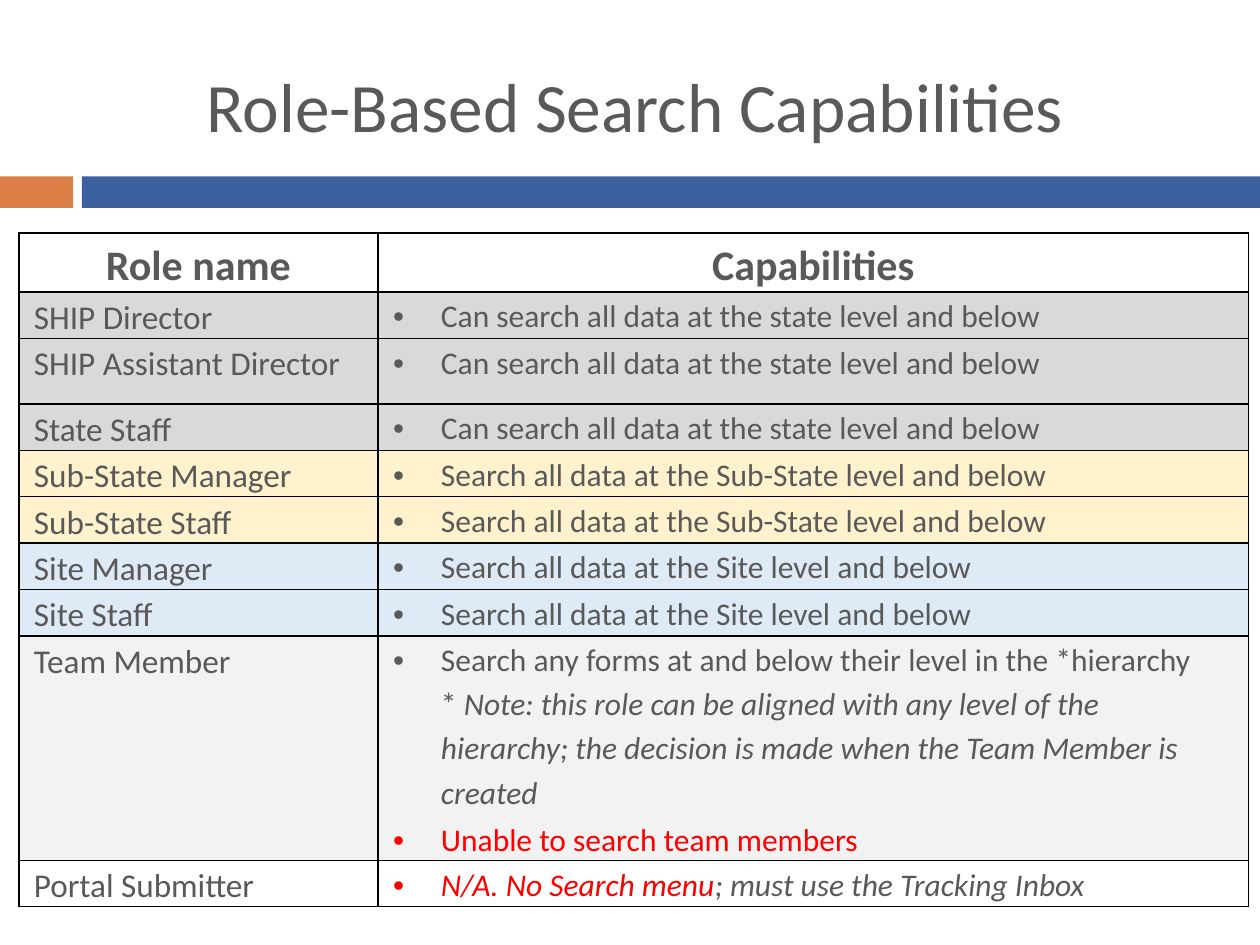
from dataclasses import dataclass

from lxml import etree
from pptx import Presentation
from pptx import util as u
from pptx.dml.color import RGBColor
from pptx.enum import shapes, text
from pptx.oxml import ns

Inches, Pt = u.Inches, u.Pt


@dataclass(frozen=True)
class Theme:
    font: str = "Calibri"
    ink: str = "595959"
    alert: str = "FF0000"
    line: str = "000000"
    white: str = "FFFFFF"
    state: str = "D9D9D9"
    sub: str = "FFF2CC"
    site: str = "DEEAF6"
    team: str = "F2F2F2"
    orange: str = "DD8047"
    blue: str = "3C619E"
    title: float = 39.6
    head: float = 24
    role: float = 19
    body: float = 18


T = Theme()
STATE = [[("Can search all data at the state level and below", T.ink, False)]]
SUB = [[("Search all data at the Sub-State level and below", T.ink, False)]]
SITE = [[("Search all data at the Site level and below", T.ink, False)]]
TEAM = [
    [
        ("Search any forms at and below their level in the *hierarchy", T.ink, False),
        ("\n", T.ink, False),
        ("* ", T.ink, False),
        ("Note: this role can be aligned with any level of the hierarchy; "
         "the decision is made when the Team Member is created", T.ink, True),
    ],
    [("Unable to search team members", T.alert, False)],
]
SUBMIT = [[
    ("N/A. No Search menu", T.alert, True),
    ("; must use the Tracking Inbox", T.ink, True),
]]

ROWS = [
    ("SHIP Director", STATE, T.state, 0.36, 3, 1),
    ("SHIP Assistant Director", STATE, T.state, 0.52, 0, 1),
    ("State Staff", STATE, T.state, 0.36, 3, 1),
    ("Sub-State Manager", SUB, T.sub, 0.36, 3, 1),
    ("Sub-State Staff", SUB, T.sub, 0.36, 3, 3),
    ("Site Manager", SITE, T.site, 0.36, 3, 1),
    ("Site Staff", SITE, T.site, 0.36, 3, 3),
    ("Team Member", TEAM, T.team, 1.75, 3, 1),
    ("Portal Submitter", SUBMIT, T.white, 0.36, 3, 1),
]


def add_run(para, words, size, color=T.ink, bold=False, italic=False):
    if words == "\n":
        para.add_line_break()
        return
    run = para.add_run()
    run.text = words
    font = run.font
    font.name, font.size = T.font, Pt(size)
    font.bold, font.italic = bold, italic
    font.color.rgb = RGBColor.from_string(color)


def add_title(slide, box):
    title = slide.shapes.title
    title.left, title.top, title.width, title.height = map(Inches, box)
    frame = title.text_frame
    frame.auto_size = text.MSO_AUTO_SIZE.NONE
    frame.vertical_anchor = text.MSO_ANCHOR.MIDDLE
    para = frame.paragraphs[0]
    para.alignment = text.PP_ALIGN.CENTER
    add_run(para, "Role-Based Search Capabilities", T.title)


def add_band(slide, box):
    left, top, width, height = box
    tab, gap = 0.58, 0.07
    start = tab + gap
    for x, span, color in ((left, tab, T.orange),
                           (left + start, width - start, T.blue)):
        bar = slide.shapes.add_shape(
            shapes.MSO_SHAPE.RECTANGLE,
            Inches(x), Inches(top), Inches(span), Inches(height))
        bar.shadow.inherit = False
        bar.fill.solid()
        bar.fill.fore_color.rgb = RGBColor.from_string(color)
        bar.line.fill.background()


def set_cell(cell, color):
    cell.margin_left = cell.margin_right = Inches(0.12)
    cell.margin_top = cell.margin_bottom = 0
    cell.fill.solid()
    cell.fill.fore_color.rgb = RGBColor.from_string(color)
    props = cell._tc.get_or_add_tcPr()
    for spot, side in enumerate(("lnL", "lnR", "lnT", "lnB")):
        edge = etree.Element(ns.qn(f"a:{side}"), w=str(Pt(1)))
        fill = etree.SubElement(edge, ns.qn("a:solidFill"))
        etree.SubElement(fill, ns.qn("a:srgbClr"), val=T.line)
        props.insert(spot, edge)


def set_space(para, before=0, after=0):
    para.line_spacing = 1.15
    para.space_before, para.space_after = Pt(before), Pt(after)


def add_bullet(para):
    props = para._p.get_or_add_pPr()
    props.set("marL", str(Inches(0.38)))
    props.set("indent", str(Inches(-0.38)))
    etree.SubElement(props, ns.qn("a:buFont"), typeface="Arial")
    etree.SubElement(props, ns.qn("a:buChar"), char="•")


def fill_head(cell, words):
    set_cell(cell, T.white)
    para = cell.text_frame.paragraphs[0]
    para.alignment = text.PP_ALIGN.CENTER
    set_space(para)
    add_run(para, words, T.head, bold=True)


def fill_role(cell, words, color, after):
    set_cell(cell, color)
    para = cell.text_frame.paragraphs[0]
    set_space(para, 3, after)
    add_run(para, words, T.role)


def fill_skill(cell, items, color, pad):
    set_cell(cell, color)
    frame = cell.text_frame
    for spot, runs in enumerate(items):
        para = frame.add_paragraph() if spot else frame.paragraphs[0]
        set_space(para, pad, pad)
        add_bullet(para)
        for words, ink, italic in runs:
            add_run(para, words, T.body, ink, italic=italic)


def add_roles(slide, box):
    table = slide.shapes.add_table(len(ROWS) + 1, 2, *map(Inches, box)).table
    table.first_row = table.horz_banding = False
    first = 2.85
    table.columns[0].width = Inches(first)
    table.columns[1].width = Inches(box[2] - first)
    table.rows[0].height = Inches(0.45)
    for col, words in enumerate(("Role name", "Capabilities")):
        fill_head(table.cell(0, col), words)
    for row, (role, items, color, height, after, pad) in enumerate(ROWS, 1):
        table.rows[row].height = Inches(height)
        fill_role(table.cell(row, 0), role, color, after)
        fill_skill(table.cell(row, 1), items, color, pad)


def main():
    deck = Presentation()
    deck.slide_width, deck.slide_height = Inches(10), Inches(7.5)
    slide = deck.slides.add_slide(deck.slide_layouts[5])
    add_band(slide, (0, 1.4, 10, 0.25))
    add_title(slide, (0.54, 0.5, 9, 0.67))
    add_roles(slide, (0.15, 1.85, 9.76, 5.29))
    deck.save("out.pptx")


if __name__ == "__main__":
    main()
